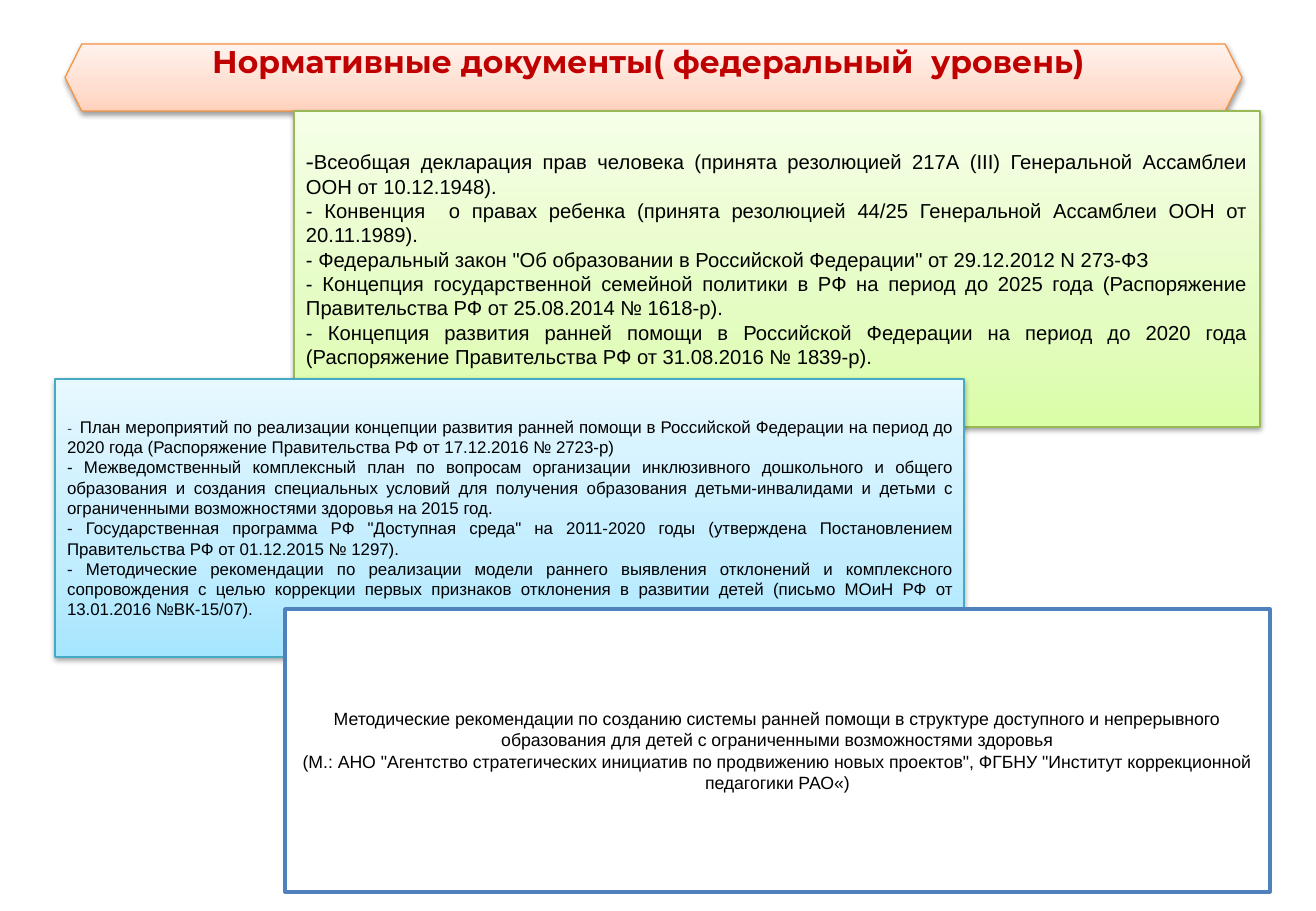
import pptx
import pptx.util
import pptx.dml.color
import pptx.enum.shapes
import pptx.enum.text
import pptx.oxml.ns
from lxml import etree

SHAPES = pptx.enum.shapes.MSO_SHAPE
ALIGN = pptx.enum.text.PP_ALIGN
EMU_PER_PX = 7526
SLIDE_SIZE = (1316, 911)

COLORS = {
    "black": "000000", "title": "C00000", "white": "FFFFFF",
    "orange line": "F69240", "green line": "98B955",
    "cyan line": "46AAC5", "blue line": "4F81BD",
}
GRADIENT_POSITIONS = (0, 35, 100)
GRADIENTS = {
    "orange": ("FFD2BD", "FFDED0", "FFF2ED"),
    "green": ("DAFDA7", "E4FCC2", "F5FFE7"),
    "cyan": ("A7E6FF", "C1EDFF", "E7F8FF"),
}

# Each paragraph is a list of runs: (text, font, size in points)
TITLE = [[("Нормативные документы( федеральный  уровень)", "Montserrat", 18.6)]]
LAWS = [
    [("-", "Times New Roman", 14),
     ("Всеобщая декларация прав человека (принята резолюцией 217А (III) Генеральной Ассамблеи ООН от 10.12.1948).", "Arial", 12)],
    [("- Конвенция  о правах ребенка (принята резолюцией 44/25 Генеральной Ассамблеи ООН от 20.11.1989).", "Arial", 12)],
    [("- Федеральный закон \"Об образовании в Российской Федерации\" от 29.12.2012 N 273-ФЗ", "Arial", 12)],
    [("- Концепция государственной семейной политики в РФ на период до 2025 года (Распоряжение Правительства РФ от 25.08.2014 № 1618-р).", "Arial", 12)],
    [("- Концепция развития ранней помощи в Российской Федерации на период до 2020 года (Распоряжение Правительства РФ от 31.08.2016 № 1839-р).", "Arial", 12)],
]
PLANS = [
    [("-  ", "Montserrat", 8),
     ("План мероприятий по реализации концепции развития ранней помощи в Российской Федерации на период до 2020 года (Распоряжение Правительства РФ от 17.12.2016 № 2723-р)", "Arial", 10)],
    [("- Межведомственный комплексный план по вопросам организации инклюзивного дошкольного и общего образования и создания специальных условий для получения образования детьми-инвалидами и детьми с ограниченными возможностями здоровья на 2015 год.", "Arial", 10)],
    [("- Государственная программа РФ \"Доступная среда\" на 2011-2020 годы (утверждена Постановлением Правительства РФ от 01.12.2015 № 1297).", "Arial", 10)],
    [("- Методические рекомендации по реализации модели раннего выявления отклонений и комплексного сопровождения с целью коррекции первых признаков отклонения в развитии детей (письмо МОиН РФ от 13.01.2016 №ВК-15/07).", "Arial", 10)],
]
GUIDELINES = [
    [("Методические рекомендации по созданию системы ранней помощи в структуре доступного и непрерывного образования для детей с ограниченными возможностями здоровья", "Arial", 10.5)],
    [("(М.: АНО \"Агентство стратегических инициатив по продвижению новых проектов\", ФГБНУ \"Институт коррекционной педагогики РАО«)", "Arial", 10.5)],
]

# Boxes are left, top, width, height; insets are left, top, right, bottom
PANELS = [
    dict(kind=SHAPES.HEXAGON, box=(65, 44, 1177, 67), insets=(12, 0, 22, 34),
         gradient="orange", line="orange line", line_width=0.75,
         paragraphs=TITLE, align=ALIGN.CENTER, color="title", bold=True),
    dict(kind=SHAPES.RECTANGLE, box=(294, 111, 966, 316), insets=(12, 6, 12, 30),
         gradient="green", line="green line", line_width=0.75,
         paragraphs=LAWS, align=ALIGN.JUSTIFY, color="black", bold=False),
    dict(kind=SHAPES.RECTANGLE, box=(55, 379, 909, 278), insets=(12, 6, 12, 6),
         gradient="cyan", line="cyan line", line_width=0.75,
         paragraphs=PLANS, align=ALIGN.JUSTIFY, color="black", bold=False),
    dict(kind=SHAPES.RECTANGLE, box=(285, 609, 985, 283), insets=(12, 6, 12, 6),
         gradient=None, line="blue line", line_width=2,
         paragraphs=GUIDELINES, align=ALIGN.CENTER, color="black", bold=False),
]


def px(length):
    return pptx.util.Emu(length * EMU_PER_PX)


def rgb(name):
    return pptx.dml.color.RGBColor.from_string(COLORS[name])


def add_element(parent, tag, **attributes):
    return etree.SubElement(parent, pptx.oxml.ns.qn(tag), attributes)


def set_gradient(shape, colors):
    shape.fill.gradient()
    shape.fill.gradient_angle = 90
    stops = shape.element.spPr.find(".//" + pptx.oxml.ns.qn("a:gsLst"))
    for stop in list(stops):
        stops.remove(stop)
    for position, color in zip(GRADIENT_POSITIONS, colors):
        stop = add_element(stops, "a:gs", pos=str(position * 1000))
        add_element(stop, "a:srgbClr", val=color)


def add_soft_shadow(shape):
    effects = shape.element.spPr.find(pptx.oxml.ns.qn("a:effectLst"))
    shadow = add_element(effects, "a:outerShdw", blurRad="40000", dist="20000",
                         dir="5400000", rotWithShape="0")
    color = add_element(shadow, "a:srgbClr", val=COLORS["black"])
    add_element(color, "a:alpha", val="38000")


def write_text(frame, panel):
    frame.word_wrap = True
    frame.vertical_anchor = pptx.enum.text.MSO_ANCHOR.MIDDLE
    (frame.margin_left, frame.margin_top,
     frame.margin_right, frame.margin_bottom) = map(px, panel["insets"])
    for index, runs in enumerate(panel["paragraphs"]):
        paragraph = frame.add_paragraph() if index else frame.paragraphs[0]
        paragraph.alignment = panel["align"]
        for text, font, size in runs:
            run = paragraph.add_run()
            run.text = text
            run.font.name = font
            run.font.size = pptx.util.Pt(size)
            run.font.bold = panel["bold"]
            run.font.color.rgb = rgb(panel["color"])


def add_panel(slide, panel):
    shape = slide.shapes.add_shape(panel["kind"], *map(px, panel["box"]))
    shape.shadow.inherit = False
    shape.line.color.rgb = rgb(panel["line"])
    shape.line.width = pptx.util.Pt(panel["line_width"])
    if panel["gradient"]:
        set_gradient(shape, GRADIENTS[panel["gradient"]])
        add_soft_shadow(shape)
    else:
        shape.fill.solid()
        shape.fill.fore_color.rgb = rgb("white")
    write_text(shape.text_frame, panel)


def main():
    presentation = pptx.Presentation()
    presentation.slide_width, presentation.slide_height = map(px, SLIDE_SIZE)
    slide = presentation.slides.add_slide(presentation.slide_layouts[6])
    for panel in PANELS:
        add_panel(slide, panel)
    presentation.save("out.pptx")


if __name__ == "__main__":
    main()
